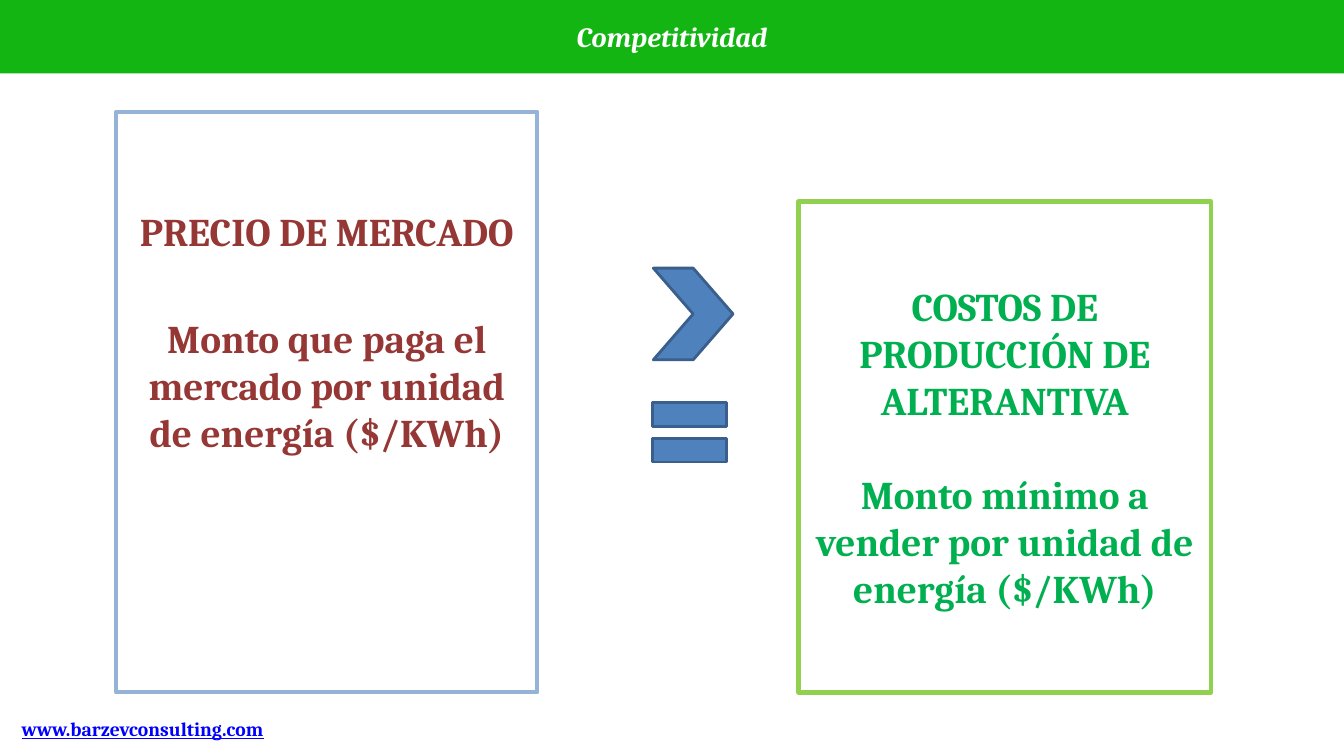
import pptx
import pptx.dml.color
import pptx.enum.shapes
import pptx.enum.text
import pptx.util

Inches = pptx.util.Inches
Pt = pptx.util.Pt
RGBColor = pptx.dml.color.RGBColor
Shape = pptx.enum.shapes.MSO_SHAPE

WHITE = RGBColor(0xFF, 0xFF, 0xFF)
BANNER_GREEN = RGBColor(0x13, 0xB5, 0x13)
LINK_BLUE = RGBColor(0x00, 0x00, 0xFF)
PRICE_RED = RGBColor(0x95, 0x37, 0x35)
PRICE_BORDER = RGBColor(0x95, 0xB3, 0xD7)
COST_GREEN = RGBColor(0x00, 0xB0, 0x50)
COST_BORDER = RGBColor(0x92, 0xD0, 0x50)
SIGN_FILL = RGBColor(0x4F, 0x81, 0xBD)
SIGN_BORDER = RGBColor(0x3A, 0x5F, 0x8C)


def add_box(slide, kind, box, fill=None, border=None, border_width=2):
    """Add a preset shape; box is left, top, width, height in inches."""
    shape = slide.shapes.add_shape(kind, *map(Inches, box))
    shape.shadow.inherit = False
    if fill is None:
        shape.fill.background()
    else:
        shape.fill.solid()
        shape.fill.fore_color.rgb = fill
    if border is None:
        shape.line.fill.background()
    else:
        shape.line.color.rgb = border
        shape.line.width = Pt(border_width)
    return shape


def write_text(shape, paragraphs, size, color, gap=0, italic=False, underline=False):
    """Fill a shape with centred bold paragraphs, gap points apart."""
    frame = shape.text_frame
    frame.word_wrap = True
    frame.vertical_anchor = pptx.enum.text.MSO_ANCHOR.MIDDLE
    frame.text = "\n".join(paragraphs)
    for index, paragraph in enumerate(frame.paragraphs):
        paragraph.alignment = pptx.enum.text.PP_ALIGN.CENTER
        if index:
            paragraph.space_before = Pt(gap)
        for run in paragraph.runs:
            font = run.font
            font.name = "Cambria"
            font.size = Pt(size)
            font.color.rgb = color
            font.bold = True
            font.italic = italic
            font.underline = underline


def add_banner(slide, box, title):
    banner = add_box(slide, Shape.RECTANGLE, box, fill=BANNER_GREEN)
    write_text(banner, [title], 20, WHITE, italic=True)


def add_footer(slide, box, address):
    footer = add_box(slide, Shape.RECTANGLE, box, fill=WHITE)
    write_text(footer, [address], 14, LINK_BLUE, underline=True)


def add_panel(slide, box, border, color, paragraphs, gap, bottom_margin=0.05):
    panel = add_box(slide, Shape.RECTANGLE, box, border=border, border_width=3)
    write_text(panel, paragraphs, 28, color, gap=gap)
    panel.text_frame.margin_bottom = Inches(bottom_margin)


def add_comparison_sign(slide, box):
    """Place a 'greater than' chevron above an equals sign."""
    left, top, width, height = box
    add_box(slide, Shape.MATH_EQUAL, (left, top + height - width, width, width),
            SIGN_FILL, SIGN_BORDER)
    add_box(slide, Shape.CHEVRON, (left + 0.14, top, 0.79, 0.91),
            SIGN_FILL, SIGN_BORDER)


def main():
    presentation = pptx.Presentation()
    presentation.slide_width = Inches(13.33)
    presentation.slide_height = Inches(7.5)
    slide = presentation.slides.add_slide(presentation.slide_layouts[6])

    add_footer(slide, (0.08, 7.06, 2.67, 0.34), "www.barzevconsulting.com")
    add_panel(slide, (1.15, 1.11, 4.18, 5.76), PRICE_BORDER, PRICE_RED,
              ["PRECIO DE MERCADO",
               "Monto que paga el mercado por unidad de energía ($/KWh)"],
              gap=43, bottom_margin=1.45)
    add_panel(slide, (7.92, 2, 4.09, 4.87), COST_BORDER, COST_GREEN,
              ["COSTOS DE PRODUCCIÓN DE ALTERANTIVA",
               "Monto mínimo a vender por unidad de energía ($/KWh)"],
              gap=33.5)
    add_comparison_sign(slide, (6.34, 2.66, 1, 2.13))
    add_banner(slide, (0, 0, 13.33, 0.73), "Competitividad")

    presentation.save("out.pptx")


if __name__ == "__main__":
    main()
